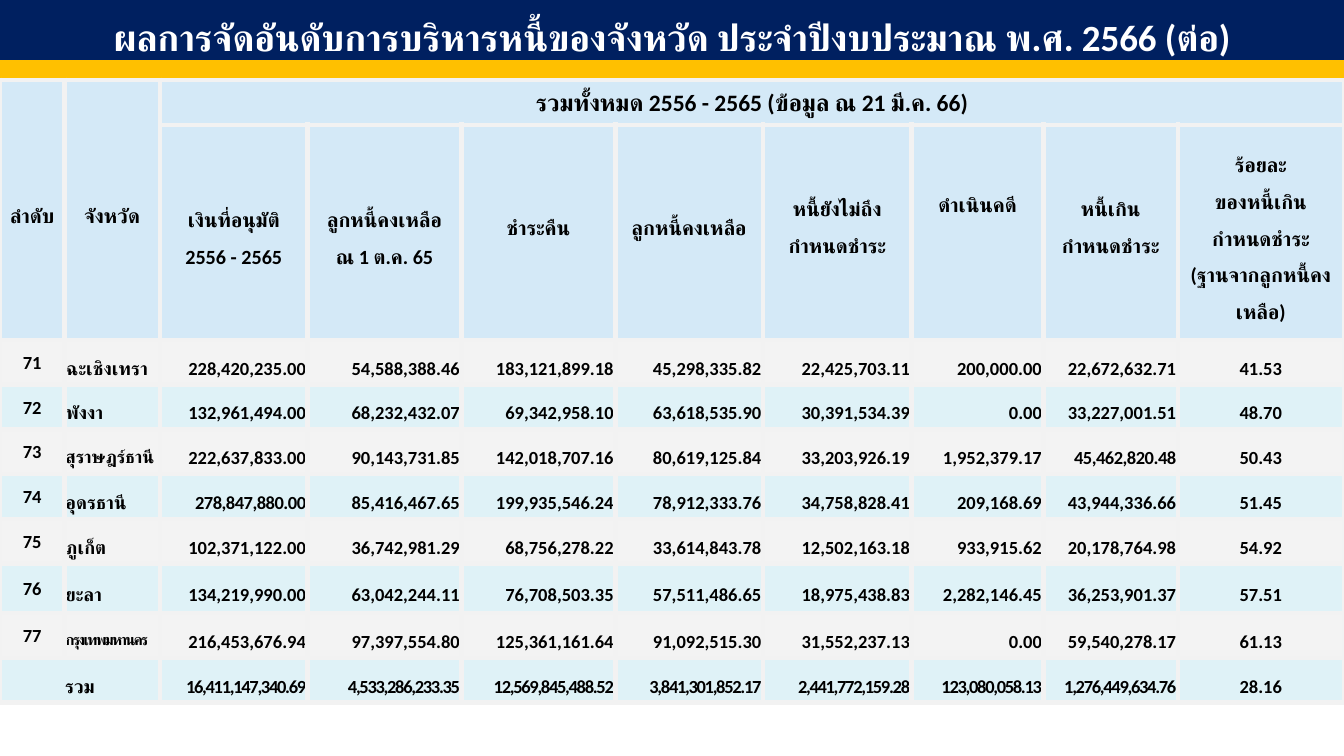
from dataclasses import dataclass

from lxml import etree
from pptx import Presentation
from pptx.dml.color import RGBColor
from pptx.enum import shapes, text
from pptx.oxml.ns import qn
from pptx.util import Cm, Pt


@dataclass(frozen=True)
class Theme:
    font: str = "Calibri"
    navy: str = "002060"
    gold: str = "FFC000"
    white: str = "FFFFFF"
    ink: str = "000000"
    border: str = "F2F2F2"
    head: tuple = ("CAE4F6", 80)
    plain: tuple = ("F2F2F2", 90)
    tinted: tuple = ("D7EFF5", 80)
    title_size: float = 22
    group_size: float = 14
    head_size: float = 12
    body_size: float = 11


THEME = Theme()
LEFT, CENTER, RIGHT = text.PP_ALIGN.LEFT, text.PP_ALIGN.CENTER, text.PP_ALIGN.RIGHT

TITLE = "ผลการจัดอันดับการบริหารหนี้ของจังหวัด ประจำปีงบประมาณ พ.ศ. 2566 (ต่อ)"
GROUP = "รวมทั้งหมด 2556 - 2565 (ข้อมูล ณ 21 มี.ค. 66)"
HEADS = [
    "เงินที่อนุมัติ\v2556 - 2565", "ลูกหนี้คงเหลือ\nณ 1 ต.ค. 65", "ชำระคืน",
    "ลูกหนี้คงเหลือ", "หนี้ยังไม่ถึง\vกำหนดชำระ", "ดำเนินคดี", "หนี้เกิน\vกำหนดชำระ",
    "ร้อยละ\vของหนี้เกิน\vกำหนดชำระ\v(ฐานจากลูกหนี้คงเหลือ)",
]
LAWSUIT = "ดำเนินคดี"
RAISED_HEADS = {2, 3, 4, 6}
PROVINCES = [
    "71 ฉะเชิงเทรา 228,420,235.00 54,588,388.46 183,121,899.18 45,298,335.82 22,425,703.11 200,000.00 22,672,632.71 41.53",
    "72 พังงา 132,961,494.00 68,232,432.07 69,342,958.10 63,618,535.90 30,391,534.39 0.00 33,227,001.51 48.70",
    "73 สุราษฎร์ธานี 222,637,833.00 90,143,731.85 142,018,707.16 80,619,125.84 33,203,926.19 1,952,379.17 45,462,820.48 50.43",
    "74 อุดรธานี 278,847,880.00 85,416,467.65 199,935,546.24 78,912,333.76 34,758,828.41 209,168.69 43,944,336.66 51.45",
    "75 ภูเก็ต 102,371,122.00 36,742,981.29 68,756,278.22 33,614,843.78 12,502,163.18 933,915.62 20,178,764.98 54.92",
    "76 ยะลา 134,219,990.00 63,042,244.11 76,708,503.35 57,511,486.65 18,975,438.83 2,282,146.45 36,253,901.37 57.51",
    "77 กรุงเทพมหานคร 216,453,676.94 97,397,554.80 125,361,161.64 91,092,515.30 31,552,237.13 0.00 59,540,278.17 61.13",
]
TOTAL = ("รวม 16,411,147,340.69 4,533,286,233.35 12,569,845,488.52 3,841,301,852.17 "
         "2,441,772,159.28 123,080,058.13 1,276,449,634.76 28.16")
# Type size and letter spacing of long entries
FITTED = {
    "สุราษฎร์ธานี": (10.5, 0),
    "กรุงเทพมหานคร": (9, -1),
    "45,462,820.48": (11, -0.3),
    "278,847,880.00": (11, -0.3),
}
COLUMNS = [1.35, 2.01, 3.1, 3.23, 3.23, 3.1, 3.12, 2.77, 2.82, 3.49]
ROWS = [0.94, 4.52] + [0.94] * 5 + [1.04] + [0.94] * 2


def style_para(para, size, color, align, spacing, tracking=0):
    para.alignment = align
    para.line_spacing = spacing
    font = para.font
    font.name, font.size, font.bold = THEME.font, Pt(size), True
    font.color.rgb = RGBColor.from_string(color)
    props = para._p.pPr.find(qn("a:defRPr"))
    etree.SubElement(props, qn("a:cs")).set("typeface", THEME.font)
    if tracking:
        props.set("spc", str(round(tracking * 100)))
        for run in para.runs:
            run._r.get_or_add_rPr().set("spc", props.get("spc"))


def paint_cell(cell, fill):
    """Give the cell a translucent fill and pale borders on all sides."""
    color, opacity = fill
    cell.fill.solid()
    cell.fill.fore_color.rgb = RGBColor.from_string(color)
    props = cell._tc.tcPr
    tone = props.find(qn("a:solidFill"))[0]
    etree.SubElement(tone, qn("a:alpha")).set("val", str(opacity * 1000))
    for place, side in enumerate(("lnL", "lnR", "lnT", "lnB")):
        line = etree.Element(qn(f"a:{side}"), w=str(Pt(3)))
        ink = etree.SubElement(line, qn("a:solidFill"))
        etree.SubElement(ink, qn("a:srgbClr")).set("val", THEME.border)
        props.insert(place, line)


def write_cell(cell, words, size, align=CENTER, spacing=1.5, tracking=0):
    cell.text = words
    cell.vertical_anchor = text.MSO_ANCHOR.MIDDLE
    cell.margin_left = cell.margin_right = cell.margin_top = Cm(0.03)
    cell.margin_bottom = 0
    for para in cell.text_frame.paragraphs:
        style_para(para, size, THEME.ink, align, spacing, tracking)


def color_bar(bar, color):
    bar.fill.solid()
    bar.fill.fore_color.rgb = bar.line.color.rgb = RGBColor.from_string(color)
    bar.line.width = Pt(1)


def add_header(page, left, top, width):
    title = page.shapes.title
    title.left, title.top, title.width, title.height = left, top, width, Cm(1.27)
    color_bar(title, THEME.navy)
    frame = title.text_frame
    frame.text = TITLE
    frame.word_wrap = True
    frame.auto_size = text.MSO_AUTO_SIZE.NONE
    frame.vertical_anchor = text.MSO_ANCHOR.MIDDLE
    style_para(frame.paragraphs[0], THEME.title_size, THEME.white, CENTER, 1.3)

    stripe = page.shapes.add_shape(shapes.MSO_SHAPE.RECTANGLE, left, top + Cm(1.27), width, Cm(0.41))
    stripe.shadow.inherit = False
    color_bar(stripe, THEME.gold)


def fill_heads(table):
    for column, words in enumerate(("ลำดับ", "จังหวัด")):
        table.cell(0, column).merge(table.cell(1, column))
        write_cell(table.cell(0, column), words, THEME.head_size)
    table.cell(0, 2).merge(table.cell(0, 9))
    write_cell(table.cell(0, 2), GROUP, THEME.group_size, spacing=1)
    for index, words in enumerate(HEADS):
        cell = table.cell(1, index + 2)
        lawsuit = words == LAWSUIT
        write_cell(cell, words, THEME.head_size, spacing=1 if lawsuit else 1.5)
        if lawsuit:
            cell.vertical_anchor = text.MSO_ANCHOR.TOP
            cell.margin_top = Cm(1.45)
        elif index in RAISED_HEADS:
            cell.margin_bottom = Cm(0.45)


def fill_provinces(table):
    aligns = [CENTER, LEFT] + [RIGHT] * 7 + [CENTER]
    for row, record in enumerate(PROVINCES, 2):
        for column, (words, align) in enumerate(zip(record.split(), aligns)):
            size, tracking = FITTED.get(words, (THEME.body_size, 0))
            write_cell(table.cell(row, column), words, size, align, 1.5 if column else 1, tracking)


def fill_total(table, row):
    table.cell(row, 0).merge(table.cell(row, 1))
    label, *sums, share = TOTAL.split()
    write_cell(table.cell(row, 0), label, THEME.body_size)
    for column, words in enumerate(sums, 2):
        write_cell(table.cell(row, column), words, THEME.body_size, RIGHT, tracking=-0.8)
    write_cell(table.cell(row, 9), share, THEME.body_size)


def add_ranking(page, left, top, width, height):
    table = page.shapes.add_table(len(ROWS), len(COLUMNS), left, top, width, height).table
    table.first_row = table.horz_banding = False
    for column, size in zip(table.columns, COLUMNS):
        column.width = Cm(size)
    for index, (row, size) in enumerate(zip(table.rows, ROWS)):
        row.height = Cm(size)
        fill = THEME.head if index < 2 else (THEME.plain, THEME.tinted)[index % 2]
        for cell in row.cells:
            paint_cell(cell, fill)
    fill_heads(table)
    fill_provinces(table)
    fill_total(table, len(ROWS) - 1)


def main():
    deck = Presentation()
    deck.slide_width, deck.slide_height = Cm(28.22), Cm(15.88)
    page = deck.slides.add_slide(deck.slide_layouts[5])
    add_header(page, 0, 0, deck.slide_width)
    add_ranking(page, 0, Cm(1.68), Cm(sum(COLUMNS)), Cm(sum(ROWS)))
    deck.save("out.pptx")


if __name__ == "__main__":
    main()
